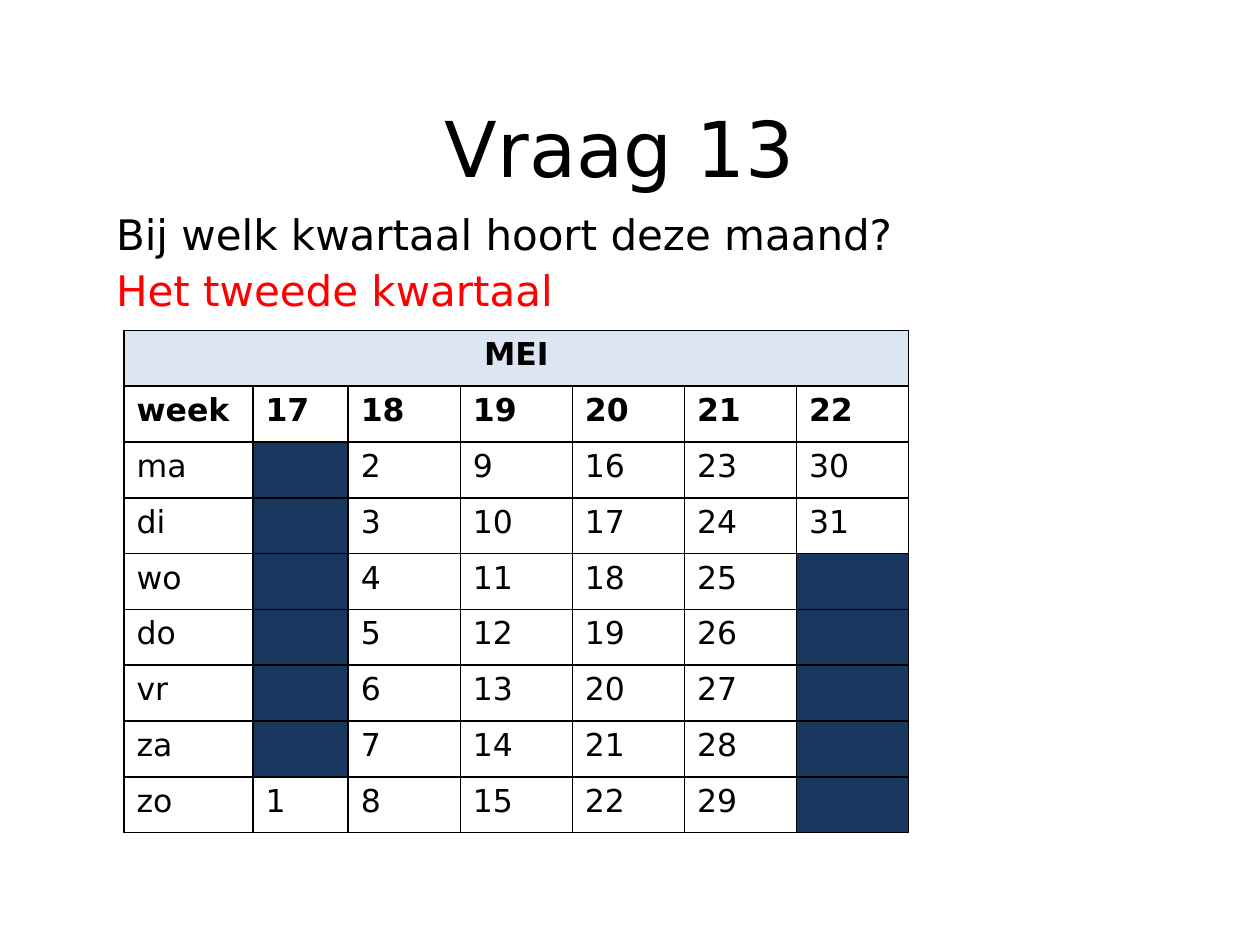
"""Build a quiz slide that asks to which quarter the month of May belongs."""
from lxml.etree import SubElement
from pptx import Presentation
from pptx.dml.color import RGBColor
from pptx.enum.shapes import MSO_SHAPE as Shape
from pptx.enum.text import MSO_ANCHOR as Anchor, PP_ALIGN as Align
from pptx.oxml.ns import qn
from pptx.util import Cm, Pt

BLACK = RGBColor(0x00, 0x00, 0x00)
WHITE = RGBColor(0xFF, 0xFF, 0xFF)
RED = RGBColor(0xFF, 0x00, 0x00)
PALE_BLUE = RGBColor(0xDC, 0xE6, 0xF2)
NAVY = RGBColor(0x17, 0x37, 0x5E)
FONT = "DejaVu Sans"
WEEKDAYS = ["ma", "di", "wo", "do", "vr", "za", "zo"]
WEEKS = range(17, 23)
LAST_DAY = 31


def style_font(para, size, color=BLACK, bold=False):
    """Set the font of a whole paragraph."""
    font = para.font
    font.name, font.size, font.bold = FONT, Pt(size), bold
    font.color.rgb = color


def add_borders(cell):
    """Draw a thin black line on each side of a cell."""
    properties = cell._tc.get_or_add_tcPr()
    for position, side in enumerate(("a:lnL", "a:lnR", "a:lnT", "a:lnB")):
        line = properties.makeelement(qn(side), {"w": str(Pt(1))})
        properties.insert(position, line)
        fill = SubElement(line, qn("a:solidFill"))
        SubElement(fill, qn("a:srgbClr"), val=str(BLACK))


deck = Presentation()
deck.slide_width, deck.slide_height = Cm(25.4), Cm(19.05)
slide = deck.slides.add_slide(deck.slide_layouts[5])

title = slide.shapes.title
title.left, title.top, title.width, title.height = Cm(1.7), Cm(0.91), Cm(21.6), Cm(4.1)
title.text_frame.text = "Vraag 13"
title.text_frame.vertical_anchor = Anchor.MIDDLE
title_para = title.text_frame.paragraphs[0]
title_para.alignment = Align.CENTER
style_font(title_para, 44)

panel = slide.shapes.add_shape(Shape.RECTANGLE, Cm(1.09), Cm(4.19), Cm(23.01), Cm(13.13))
panel.shadow.inherit = False
panel.line.fill.background()
panel.fill.solid()
panel.fill.fore_color.rgb = WHITE
panel_color = panel._element.spPr.find(qn("a:solidFill")).find(qn("a:srgbClr"))
SubElement(panel_color, qn("a:alpha"), val="76000")

frame = panel.text_frame
frame.word_wrap = True
frame.vertical_anchor = Anchor.TOP
frame.text = "Bij welk kwartaal hoort deze maand?\nHet tweede kwartaal"
question, answer = frame.paragraphs
for para, color in ((question, BLACK), (answer, RED)):
    para._p.get_or_add_pPr().set("marL", str(Cm(1)))
    para.alignment = Align.LEFT
    para.line_spacing = 0.9
    style_font(para, 24, color)
answer.space_before = Pt(6)

rows = [["MEI"] + [""] * len(WEEKS), ["week", *map(str, WEEKS)]]
for weekday, name in enumerate(WEEKDAYS):
    days = [7 * week + weekday - 5 for week in range(len(WEEKS))]
    rows.append([name] + [str(day) if 1 <= day <= LAST_DAY else "" for day in days])

column_widths = [Cm(2.6), Cm(1.92)] + [Cm(2.26)] * 5
row_height = Cm(1.126)
table = slide.shapes.add_table(
    len(rows), len(column_widths), Cm(2.5), Cm(6.66), sum(column_widths), row_height * len(rows)
).table
for column, width in zip(table.columns, column_widths):
    column.width = width
for row in table.rows:
    row.height = row_height

for row_number, row in enumerate(rows):
    for column_number, text in enumerate(row):
        cell = table.cell(row_number, column_number)
        cell.text = text
        cell.fill.solid()
        if row_number == 0:
            cell.fill.fore_color.rgb = PALE_BLUE
        else:
            cell.fill.fore_color.rgb = WHITE if text else NAVY
        add_borders(cell)
        style_font(cell.text_frame.paragraphs[0], 18, bold=row_number < 2)

month = table.cell(0, 0)
month.merge(table.cell(0, len(WEEKS)))
month.text_frame.paragraphs[0].alignment = Align.CENTER

deck.save("out.pptx")
